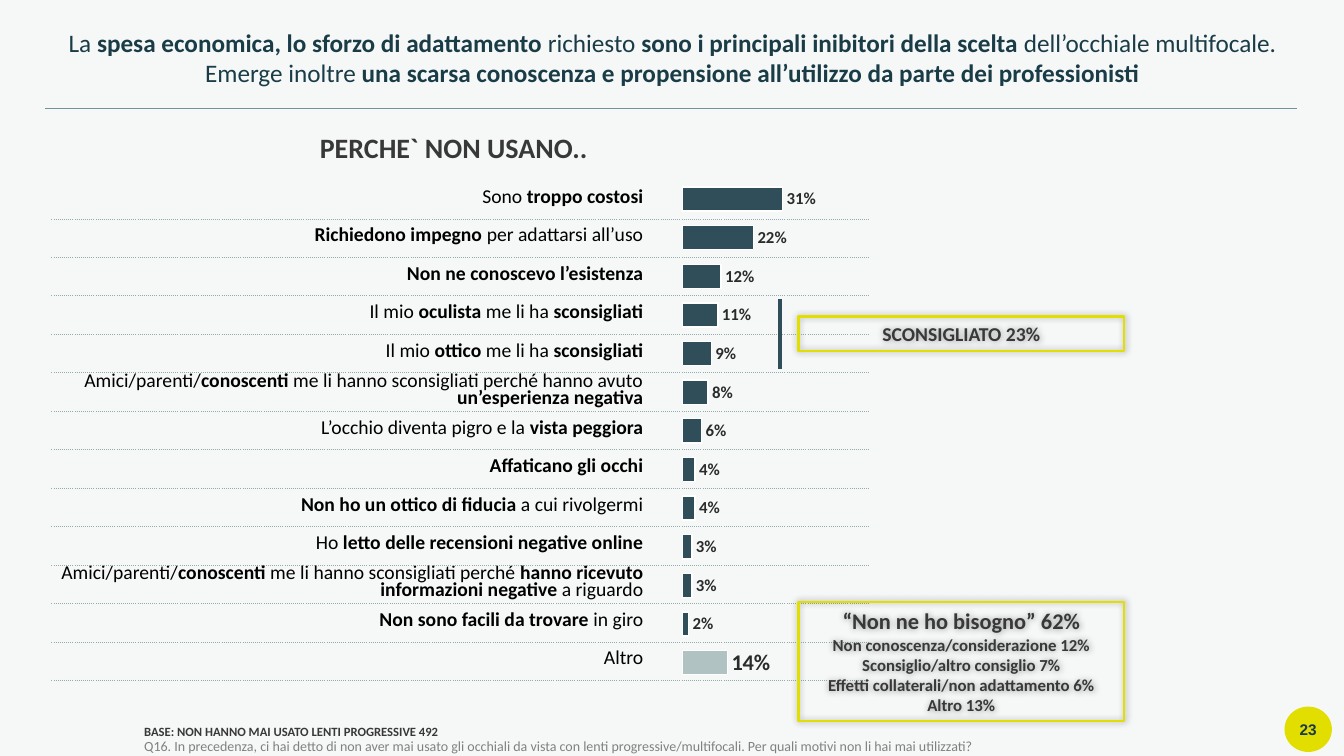
from dataclasses import dataclass

from lxml import etree
from pptx import Presentation
from pptx.chart.data import CategoryChartData
from pptx.dml.color import RGBColor
from pptx.enum import chart as ch, shapes, text
from pptx.oxml import ns, parse_xml
from pptx.util import Inches, Pt


@dataclass(frozen=True)
class Theme:
    font: str = "Calibri"
    number_font: str = "Arial"
    background: str = "F6F8F8"
    title: str = "1A3C47"
    ink: str = "383839"
    black: str = "000000"
    label: str = "2B2B2B"
    grey: str = "808080"
    accent: str = "E2DE00"
    badge_ink: str = "193B47"
    rule: str = "76929C"
    dots: str = "95ACAC"
    bar: str = "304E59"
    bar_other: str = "B1C2C2"
    white: str = "FFFFFF"
    title_size: int = 18
    heading_size: int = 20
    big: int = 16
    body: int = 14
    small: int = 12
    badge: int = 11
    note: int = 10
    base: int = 9


T = Theme()
CENTER, RIGHT, LEFT = text.PP_ALIGN.CENTER, text.PP_ALIGN.RIGHT, text.PP_ALIGN.LEFT

TITLE = ("La *spesa economica, lo sforzo di adattamento *richiesto *sono i principali inibitori "
         "della scelta *dell’occhiale multifocale. Emerge inoltre *una scarsa conoscenza e "
         "propensione all’utilizzo da parte dei professionisti*")
REASONS = [
    ("Sono *troppo costosi*", 0.31),
    ("*Richiedono impegno *per adattarsi all’uso", 0.22),
    ("*Non ne conoscevo l’esistenza*", 0.12),
    ("Il mio *oculista* me li ha *sconsigliati*", 0.11),
    ("Il mio *ottico* me li ha *sconsigliati*", 0.09),
    ("Amici/parenti/*conoscenti* me li hanno sconsigliati perché hanno avuto "
     "*un’esperienza negativa*", 0.08),
    ("L’occhio diventa pigro e la *vista peggiora*", 0.06),
    ("*Affaticano gli occhi*", 0.04),
    ("*Non ho un ottico di fiducia *a cui rivolgermi", 0.04),
    ("Ho *letto delle recensioni negative online*", 0.03),
    ("Amici/parenti/*conoscenti* me li hanno sconsigliati perché *hanno ricevuto "
     "informazioni negative *a riguardo", 0.03),
    ("*Non sono facili da trovare *in giro", 0.02),
    ("Altro", 0.14),
]


def rgb(color):
    return RGBColor.from_string(color)


def inches(box):
    return [Inches(v) for v in box]


def style(font, size, color, bold=False, name=T.font):
    font.size, font.bold, font.name = Pt(size), bold, name
    font.color.rgb = rgb(color)


def write(p, marked, size, color, align=LEFT, name=T.font):
    """Fill a paragraph; the parts between asterisks are bold."""
    p.alignment = align
    for i, part in enumerate(marked.split("*")):
        if part:
            r = p.add_run()
            r.text = part
            style(r.font, size, color, i % 2 == 1, name)


def write_lines(tf, lines, align=LEFT):
    """Write (marked text, size, color) lines, one paragraph each."""
    tf.word_wrap = True
    for i, (marked, size, color) in enumerate(lines):
        p = tf.paragraphs[0] if i == 0 else tf.add_paragraph()
        write(p, marked, size, color, align)


def no_margins(frame):
    frame.margin_left = frame.margin_right = frame.margin_top = frame.margin_bottom = 0


def add_line(s, start, end, color, width):
    line = s.shapes.add_connector(shapes.MSO_CONNECTOR.STRAIGHT, *inches(start + end))
    line.line.color.rgb = rgb(color)
    line.line.width = Pt(width)
    etree.SubElement(line._element.spPr, ns.qn("a:effectLst"))


def add_title(s, box):
    sp = s.shapes.title
    sp.left, sp.top, sp.width, sp.height = inches(box)
    tf = sp.text_frame
    tf.auto_size = text.MSO_AUTO_SIZE.NONE
    tf.vertical_anchor = text.MSO_ANCHOR.TOP
    write_lines(tf, [(TITLE, T.title_size, T.title)], CENTER)
    left, width = 0.45, 12.41
    add_line(s, (left, 1.08), (left + width, 1.08), T.rule, 0.5)


def add_heading(s, box):
    tf = s.shapes.add_textbox(*inches(box)).text_frame
    write_lines(tf, [("*PERCHE` NON USANO..*", T.heading_size, T.ink)], CENTER)


def add_footnote(s, box):
    tf = s.shapes.add_textbox(*inches(box)).text_frame
    no_margins(tf)
    tf.vertical_anchor = text.MSO_ANCHOR.BOTTOM
    write_lines(tf, [
        ("*BASE: NON HANNO MAI USATO LENTI PROGRESSIVE 492*", T.base, T.ink),
        ("Q16. In precedenza, ci hai detto di non aver mai usato gli occhiali da vista con lenti "
         "progressive/multifocali. Per quali motivi non li hai mai utilizzati?", T.note, T.grey)])
    for p in tf.paragraphs:
        p.line_spacing = 0.95


def add_page_number(s, box):
    sp = s.shapes.add_shape(shapes.MSO_SHAPE.OVAL, *inches(box))
    sp.shadow.inherit = False
    sp.fill.solid()
    sp.fill.fore_color.rgb = rgb(T.accent)
    sp.line.fill.background()
    no_margins(sp.text_frame)
    write(sp.text_frame.paragraphs[0], "*23*", T.badge, T.badge_ink, CENTER, T.number_font)


def add_reasons_table(s, box):
    left, top, width, height = box
    tbl = s.shapes.add_table(len(REASONS), 2, *inches(box)).table
    tbl.first_row = tbl.horz_banding = False
    no_style = "{2D5ABB26-0587-4C30-8999-92F81FD0307C}"
    tbl._tbl.tblPr.find(ns.qn("a:tableStyleId")).text = no_style
    label_width = 5.88
    tbl.columns[0].width, tbl.columns[1].width = inches((label_width, width - label_width))
    for row, (reason, _) in zip(tbl.rows, REASONS):
        row.height = Inches(height / len(REASONS))
        for cell in row.cells:
            no_margins(cell)
            cell.vertical_anchor = text.MSO_ANCHOR.MIDDLE
            cell.fill.background()
            cell._tc.tcPr.insert(0, parse_xml(
                f'<a:lnB {ns.nsdecls("a")} w="6350"><a:solidFill><a:srgbClr val="{T.dots}"/>'
                '</a:solidFill><a:prstDash val="sysDot"/></a:lnB>'))
        label = row.cells[0]
        label.margin_left = label.margin_right = label.margin_top = Inches(0.01)
        p = label.text_frame.paragraphs[0]
        write(p, reason, T.body, T.black, RIGHT)
        p.line_spacing = Pt(12)


def add_reasons_chart(s, box):
    data = CategoryChartData(number_format="0%")
    data.categories = [str(i + 1) for i in range(len(REASONS))]
    data.add_series("Series 1", [value for _, value in REASONS])
    chart = s.shapes.add_chart(ch.XL_CHART_TYPE.BAR_CLUSTERED, *inches(box), data).chart
    chart.has_legend = chart.has_title = False
    style(chart.font, T.base, T.label)
    for axis in (chart.category_axis, chart.value_axis):
        axis.has_major_gridlines = False
        axis.visible = False
    chart.category_axis.reverse_order = True
    chart.value_axis.minimum_scale, chart.value_axis.maximum_scale = 0, 0.9

    plot = chart.plots[0]
    plot.gap_width, plot.vary_by_categories = 60, False
    series = plot.series[0]
    other = series.points[len(REASONS) - 1]
    for part, color in ((series, T.bar), (other, T.bar_other)):
        part.format.fill.solid()
        part.format.fill.fore_color.rgb = rgb(color)
        part.format.line.color.rgb = rgb(T.white)
        part.format.line.width = Pt(1)
    labels = series.data_labels
    labels.show_value = True
    labels.number_format, labels.number_format_is_linked = "0%", False
    for label, size in ((labels, T.small), (other.data_label, T.big)):
        style(label.font, size, T.label, True)
        label.position = ch.XL_LABEL_POSITION.OUTSIDE_END

    area = chart._chartSpace.chart.plotArea
    for layout in area.findall(ns.qn("c:layout")):
        area.remove(layout)
    sizes = "".join(f'<c:{k} val="{v}"/>' for k, v in (
        ("layoutTarget", "inner"), ("xMode", "edge"), ("yMode", "edge"),
        ("x", 0.054), ("y", 0.018), ("w", 0.724), ("h", 0.966)))
    area.insert(0, parse_xml(
        f'<c:layout {ns.nsdecls("c")}><c:manualLayout>{sizes}</c:manualLayout></c:layout>'))


def add_callout(s, box, lines):
    """Outlined box with a soft glow-like shadow and centred bold lines."""
    sp = s.shapes.add_shape(shapes.MSO_SHAPE.RECTANGLE, *inches(box))
    sp.fill.background()
    sp.line.color.rgb = rgb(T.accent)
    sp.line.width = Pt(1.5)
    sp._element.spPr.append(parse_xml(
        f'<a:effectLst {ns.nsdecls("a")}><a:outerShdw blurRad="{Pt(5)}" dist="0" dir="0">'
        f'<a:srgbClr val="{T.black}"><a:alpha val="40000"/></a:srgbClr></a:outerShdw></a:effectLst>'))
    write_lines(sp.text_frame, [(f"*{line}*", size, T.ink) for line, size in lines], CENTER)


def main():
    prs = Presentation()
    prs.slide_width, prs.slide_height = Inches(13.33), Inches(7.5)
    s = prs.slides.add_slide(prs.slide_layouts[5])
    s.background.fill.solid()
    s.background.fill.fore_color.rgb = rgb(T.background)
    add_title(s, (0.34, 0.22, 12.66, 0.71))
    add_page_number(s, (12.74, 7.01, 0.47, 0.45))
    add_footnote(s, (1.43, 6.56, 11.9, 0.93))
    add_heading(s, (1.35, 1.25, 6.3, 0.44))
    add_reasons_table(s, (0.51, 1.79, 8.11, 4.96))
    add_reasons_chart(s, (6.55, 1.69, 4, 5.16))
    add_callout(s, (7.92, 5.97, 3.23, 1.18), [
        ("“Non ne ho bisogno” 62%", T.big),
        ("Non conoscenza/considerazione 12%", T.small),
        ("Sconsiglio/altro consiglio 7%", T.small),
        ("Effetti collaterali/non adattamento 6%", T.small),
        ("Altro 13%", T.small)])
    add_line(s, (7.74, 2.97), (7.74, 3.66), T.bar, 3)
    add_callout(s, (7.92, 3.14, 3.23, 0.34), [("SCONSIGLIATO 23%", T.body)])
    prs.save("out.pptx")


if __name__ == "__main__":
    main()
